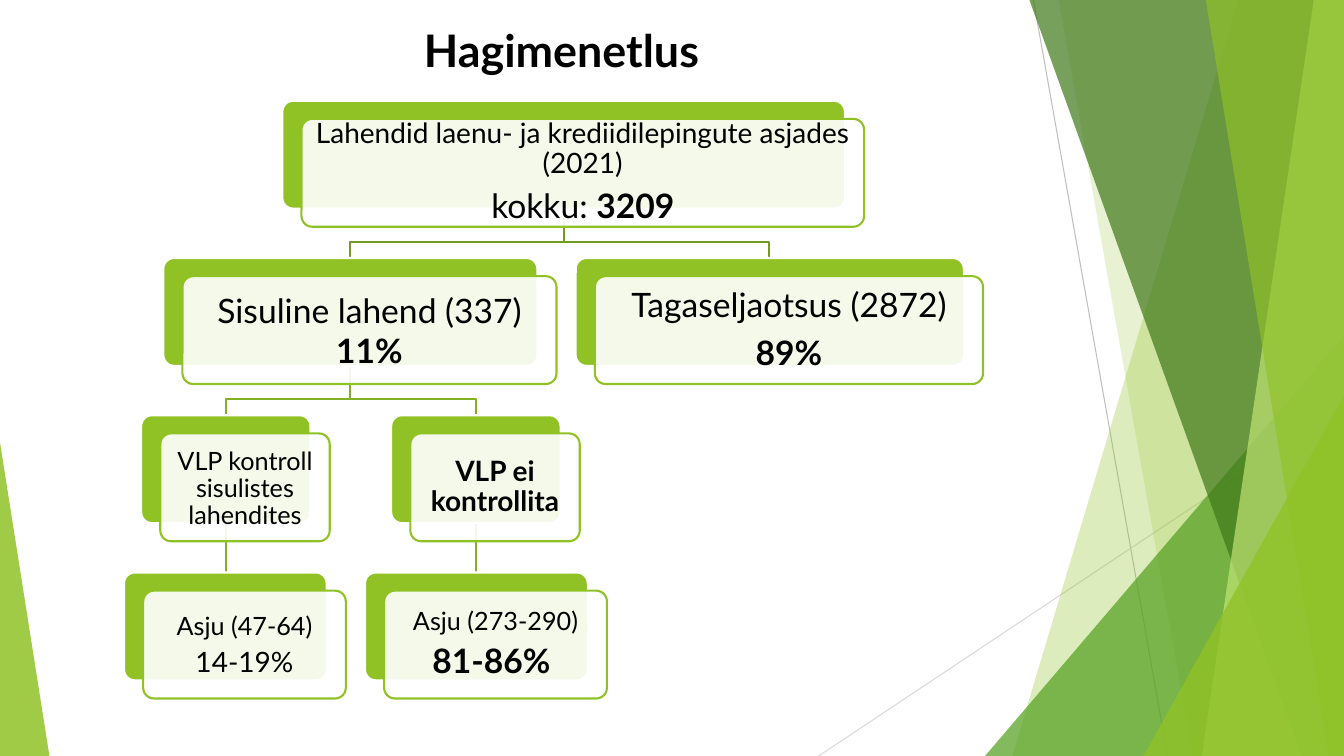
from dataclasses import dataclass

import pptx
import pptx.util
from lxml import etree
from pptx.dml.color import RGBColor
from pptx.enum.shapes import MSO_CONNECTOR, MSO_SHAPE
from pptx.enum.text import MSO_ANCHOR, PP_ALIGN
from pptx.oxml.ns import qn

PX = 9144  # one hundredth of an inch
SLIDE_W, SLIDE_H = 1333, 750
FONT = "Lato"

BLACK = RGBColor(0x00, 0x00, 0x00)
WHITE = RGBColor(0xFF, 0xFF, 0xFF)
LIME = RGBColor(0x90, 0xC2, 0x26)
PALE_LIME = RGBColor(0xC0, 0xE4, 0x74)
GREEN = RGBColor(0x54, 0xA0, 0x21)
DARK_GREEN = RGBColor(0x3F, 0x78, 0x19)
ROOT_LINK = RGBColor(0x73, 0x9B, 0x1E)
BRANCH_LINK = RGBColor(0x83, 0xB0, 0x22)
GREY = RGBColor(0xBF, 0xBF, 0xBF)
LIGHT_GREY = RGBColor(0xD9, 0xD9, 0xD9)

ROW_TOP, ROW_STEP, NODE_H = 100, 156, 107
FRONT_DX, FRONT_DY = 19, 18
ELBOW_RISE = 16


@dataclass(frozen=True)
class Run:
    text: str
    size: int
    bold: bool = False


@dataclass(frozen=True)
class Para:
    runs: tuple[Run, ...]
    line_spacing: float = 0.9
    after: float = 0


@dataclass(frozen=True)
class Node:
    row: int
    left: int
    width: int
    inset: int
    paras: tuple[Para, ...]

    @property
    def top(self) -> int:
        return ROW_TOP + ROW_STEP * self.row

    @property
    def center(self) -> int:
        return self.left + self.width // 2


@dataclass(frozen=True)
class Facet:
    """A see-through decoration: a polygon, or a triangle with its apex at one side."""
    color: RGBColor
    alpha: int
    points: tuple[tuple[int, int], ...] = ()
    box: tuple[int, int, int, int] = (0, 0, 0, 0)
    apex: int = 1


@dataclass(frozen=True)
class Ray:
    start: tuple[int, int]
    end: tuple[int, int]
    color: RGBColor


RAYS = (
    Ray((1025, 0), (1158, SLIDE_H), GREY),
    Ray((SLIDE_W, 403), (812, SLIDE_H), LIGHT_GREY),
)


def band(color: RGBColor, alpha: int, top_x: int, bottom_x: int) -> Facet:
    """A facet from a slanted left edge to the right edge of the slide."""
    return Facet(color, alpha, ((top_x, 0), (SLIDE_W, 0), (SLIDE_W, SLIDE_H), (bottom_x, SLIDE_H)))


FACETS = (
    band(LIME, 30, 1228, 1004),
    band(LIME, 20, 1050, 1183),
    Facet(GREEN, 72, box=(977, 333, 356, 417)),
    band(DARK_GREEN, 70, 1021, 1291),
    band(PALE_LIME, 70, 1303, 1192),
    band(LIME, 65, 1196, 1318),
    Facet(LIME, 80, box=(1134, 393, 199, 357)),
    Facet(LIME, 85, box=(0, 439, 49, 311), apex=0),
)

ROOT = Node(0, 280, 558, 8, (
    Para((Run("Lahendid laenu- ja krediidilepingute asjades (2021)", 20),), after=7),
    Para((Run("kokku: ", 24), Run("3209", 24, True)), after=8.4)))
RULING = Node(1, 162, 371, 10, (
    Para((Run("Sisuline lahend (337)", 24),), 1),
    Para((Run("11%", 24, True),), 1)))
DEFAULT_RULING = Node(1, 571, 385, 10, (
    Para((Run("Tagaseljaotsus (2872)", 24),), after=8.4),
    Para((Run("89%", 24, True),), after=8.4)))
CHECKED = Node(2, 140, 168, 7, (
    Para((Run("VLP kontroll", 18),), 1),
    Para((Run("sisulistes lahendites", 18),), after=6.3)))
CHECKED_CASES = Node(3, 123, 201, 7, (
    Para((Run("Asju (47-64)", 18),), 1, 6),
    Para((Run("14-19%", 20),), after=7)))
UNCHECKED = Node(2, 388, 168, 8, (
    Para((Run("VLP ei kontrollita", 20, True),), after=7),))
UNCHECKED_CASES = Node(3, 362, 221, 7, (
    Para((Run("Asju (273-290)", 18),), after=6.3),
    Para((Run("81-86% ", 24, True),), after=8.4)))

NODES = (ROOT, RULING, CHECKED, CHECKED_CASES, UNCHECKED, UNCHECKED_CASES, DEFAULT_RULING)
LINKS = (
    (ROOT, DEFAULT_RULING), (UNCHECKED, UNCHECKED_CASES), (RULING, UNCHECKED),
    (CHECKED, CHECKED_CASES), (RULING, CHECKED), (ROOT, RULING),
)


def fill_shape(s, color: RGBColor, alpha: int = 100) -> None:
    s.shadow.inherit = False
    s.fill.solid()
    s.fill.fore_color.rgb = color
    if alpha < 100:
        clr = s.fill._xPr.find(qn("a:solidFill"))[0]
        etree.SubElement(clr, qn("a:alpha")).set("val", str(alpha * 1000))


def draw_line(shapes, start, end, color: RGBColor, width: float) -> None:
    c = shapes.add_connector(MSO_CONNECTOR.STRAIGHT, *(v * PX for v in (*start, *end)))
    c.line.color.rgb = color
    c.line.width = pptx.util.Pt(width)
    etree.SubElement(c._element.spPr, qn("a:effectLst"))


def draw_polygon(shapes, points, close: bool):
    builder = shapes.build_freeform(*points[0], scale=PX)
    builder.add_line_segments(points[1:], close=close)
    return builder.convert_to_shape()


def draw_facet(shapes, facet: Facet) -> None:
    if facet.points:
        s = draw_polygon(shapes, facet.points, True)
    else:
        s = shapes.add_shape(MSO_SHAPE.ISOSCELES_TRIANGLE, *(v * PX for v in facet.box))
        s.adjustments[0] = facet.apex
    fill_shape(s, facet.color, facet.alpha)
    s.line.fill.background()


def draw_link(shapes, parent: Node, child: Node) -> None:
    color = ROOT_LINK if parent is ROOT else BRANCH_LINK
    x, y = parent.center, parent.top + NODE_H
    if abs(x - child.center) < 2:
        draw_line(shapes, (x, y), (x, child.top), color, 1.5)
        return
    bend = child.top - ELBOW_RISE
    points = ((x, y), (x, bend), (child.center, bend), (child.center, child.top))
    s = draw_polygon(shapes, points, False)
    s.shadow.inherit = False
    s.fill.background()
    s.line.color.rgb = color
    s.line.width = pptx.util.Pt(1.5)


def add_run(p, run: Run) -> None:
    r = p.add_run()
    r.text = run.text
    r.font.name = FONT
    r.font.size = pptx.util.Pt(run.size)
    r.font.bold = run.bold
    r.font.color.rgb = BLACK


def draw_card(shapes, node: Node, dx: int, dy: int, fill: RGBColor, alpha: int, line: RGBColor):
    box = (node.left + dx, node.top + dy, node.width, NODE_H)
    s = shapes.add_shape(MSO_SHAPE.ROUNDED_RECTANGLE, *(v * PX for v in box))
    s.adjustments[0] = 0.1
    fill_shape(s, fill, alpha)
    s.line.color.rgb = line
    s.line.width = pptx.util.Pt(1.5)
    return s


def draw_node(shapes, node: Node) -> None:
    draw_card(shapes, node, 0, 0, LIME, 100, WHITE)
    tf = draw_card(shapes, node, FRONT_DX, FRONT_DY, WHITE, 90, LIME).text_frame
    tf.word_wrap = True
    tf.vertical_anchor = MSO_ANCHOR.MIDDLE
    tf.margin_left = tf.margin_right = tf.margin_top = tf.margin_bottom = node.inset * PX
    for i, para in enumerate(node.paras):
        p = tf.add_paragraph() if i else tf.paragraphs[0]
        p.alignment = PP_ALIGN.CENTER
        p.line_spacing = para.line_spacing
        p.space_after = pptx.util.Pt(para.after)
        for run in para.runs:
            add_run(p, run)


def main() -> None:
    prs = pptx.Presentation()
    prs.slide_width, prs.slide_height = SLIDE_W * PX, SLIDE_H * PX
    slide = prs.slides.add_slide(prs.slide_layouts[5])
    title = slide.shapes.title
    title.left, title.top, title.width, title.height = (v * PX for v in (121, 17, 872, 64))
    title.text_frame.vertical_anchor = MSO_ANCHOR.MIDDLE
    p = title.text_frame.paragraphs[0]
    p.alignment = PP_ALIGN.CENTER
    add_run(p, Run("Hagimenetlus", 32, True))
    for ray in RAYS:
        draw_line(slide.shapes, ray.start, ray.end, ray.color, 0.75)
    for facet in FACETS:
        draw_facet(slide.shapes, facet)
    for parent, child in LINKS:
        draw_link(slide.shapes, parent, child)
    for node in NODES:
        draw_node(slide.shapes, node)
    prs.save("out.pptx")


if __name__ == "__main__":
    main()
